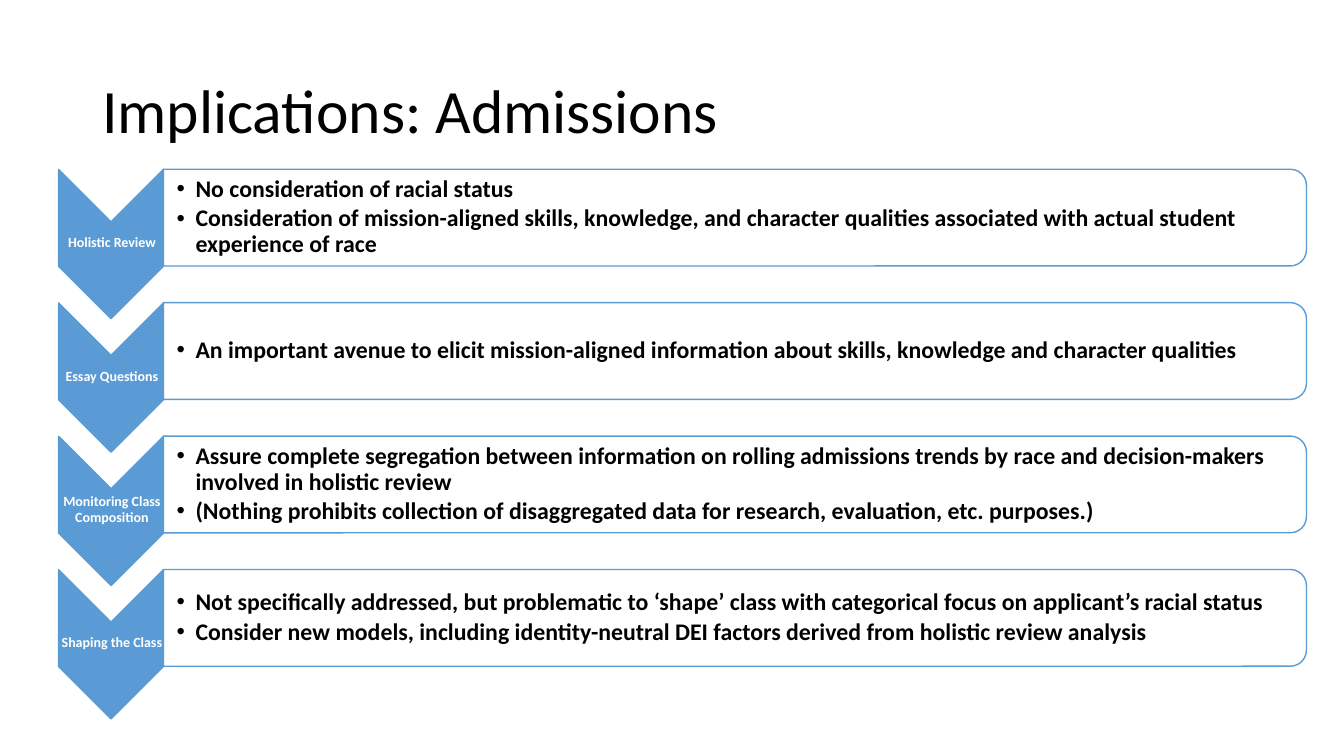
import dataclasses

import lxml.etree
import pptx
import pptx.dml.color
import pptx.enum.shapes
import pptx.enum.text
import pptx.oxml.ns
import pptx.util

Pt = pptx.util.Pt
Shape = pptx.enum.shapes.MSO_SHAPE
Align = pptx.enum.text.PP_ALIGN

COLOURS = {"accent": "5B9BD5", "light": "FFFFFF", "ink": "000000"}
FONT = "Calibri"
ROW_PITCH = 95.3
BULLET_INDENT = 13.5


@dataclasses.dataclass(frozen=True)
class Topic:
    label: str
    points: tuple[str, ...]


@dataclasses.dataclass(frozen=True)
class Area:
    left: float
    top: float
    width: float
    height: float

    def lowered(self, distance: float) -> "Area":
        return dataclasses.replace(self, top=self.top + distance)

    def lengths(self) -> tuple[int, ...]:
        return tuple(Pt(value) for value in dataclasses.astuple(self))


TITLE = Area(66, 28.8, 828, 104.4)
CHEVRON = Area(26, 136.9, 106.6, 74.9)
LABEL = Area(42.5, 157.8, 74.9, 31.7)
PANEL = Area(490.4, -252.8, 69.1, 816.5)
POINTS = Area(116.8, 124, 813, 62.5)

TOPICS = (
    Topic("Holistic Review", (
        "No consideration of racial status",
        "Consideration of mission-aligned skills, knowledge, and character qualities "
        "associated with actual student experience of race",
    )),
    Topic("Essay Questions", (
        "An important avenue to elicit mission-aligned information about skills, "
        "knowledge and character qualities",
    )),
    Topic("Monitoring Class Composition", (
        "Assure complete segregation between information on rolling admissions trends "
        "by race and decision-makers involved in holistic review",
        "(Nothing prohibits collection of disaggregated data for research, evaluation, "
        "etc. purposes.)",
    )),
    Topic("Shaping the Class", (
        "Not specifically addressed, but problematic to ‘shape’ class with categorical "
        "focus on applicant’s racial status",
        "Consider new models, including identity-neutral DEI factors derived from "
        "holistic review analysis",
    )),
)


def colour(name: str) -> pptx.dml.color.RGBColor:
    return pptx.dml.color.RGBColor.from_string(COLOURS[name])


def add_child(parent, tag: str, **attributes: str):
    return lxml.etree.SubElement(parent, pptx.oxml.ns.qn(tag), attributes)


def add_turned_shape(page, kind: Shape, area: Area, fill: str, opacity: int = 100) -> None:
    """Draw a shape turned a quarter clockwise; area is its unturned frame."""
    shape = page.shapes.add_shape(kind, *area.lengths())
    shape.rotation = 90
    shape.shadow.inherit = False
    shape.fill.solid()
    shape.fill.fore_color.rgb = colour(fill)
    if opacity < 100:
        tint = shape.fill._xPr.find(".//" + pptx.oxml.ns.qn("a:srgbClr"))
        add_child(tint, "a:alpha", val=str(opacity * 1000))
    shape.line.color.rgb = colour("accent")
    shape.line.width = Pt(1)


def add_bullet(para) -> None:
    properties = para._p.get_or_add_pPr()
    properties.set("marL", str(Pt(BULLET_INDENT)))
    properties.set("indent", str(-Pt(BULLET_INDENT)))
    add_child(properties, "a:buFont", typeface="Arial")
    add_child(properties, "a:buChar", char="•")


def add_text(page, area: Area, lines: tuple[str, ...], *, size: float, ink: str = "ink",
             bold: bool = True, align: Align = Align.LEFT, after: float = 0,
             inset: float = 0.7, left_inset: float = 0.7, bulleted: bool = False) -> None:
    box = page.shapes.add_textbox(*area.lengths())
    frame = box.text_frame
    frame.word_wrap = True
    frame.vertical_anchor = pptx.enum.text.MSO_ANCHOR.MIDDLE
    frame.margin_left = Pt(left_inset)
    frame.margin_top = frame.margin_right = frame.margin_bottom = Pt(inset)
    for index, line in enumerate(lines):
        para = frame.add_paragraph() if index else frame.paragraphs[0]
        para.alignment = align
        para.line_spacing = 0.9
        para.space_after = Pt(after)
        if bulleted:
            add_bullet(para)
        span = para.add_run()
        span.text = line
        span.font.name = FONT
        span.font.size = Pt(size)
        span.font.bold = bold
        span.font.color.rgb = colour(ink)


def add_topic(page, topic: Topic, drop: float) -> None:
    add_turned_shape(page, Shape.CHEVRON, CHEVRON.lowered(drop), "accent")
    add_text(page, LABEL.lowered(drop), (topic.label,), size=10, ink="light",
             align=Align.CENTER, after=3.5)
    add_turned_shape(page, Shape.ROUND_2_SAME_RECTANGLE, PANEL.lowered(drop), "light", 90)
    add_text(page, POINTS.lowered(drop), topic.points, size=17, after=2.6,
             left_inset=9.4, bulleted=True)


def main() -> None:
    deck = pptx.Presentation()
    deck.slide_width, deck.slide_height = Pt(960), Pt(540)
    page = deck.slides.add_slide(deck.slide_layouts[6])
    add_text(page, TITLE, ("Implications: Admissions",), size=44, bold=False,
             inset=3.6, left_inset=7.2)
    for row, topic in enumerate(TOPICS):
        add_topic(page, topic, row * ROW_PITCH)
    deck.save("out.pptx")


if __name__ == "__main__":
    main()
